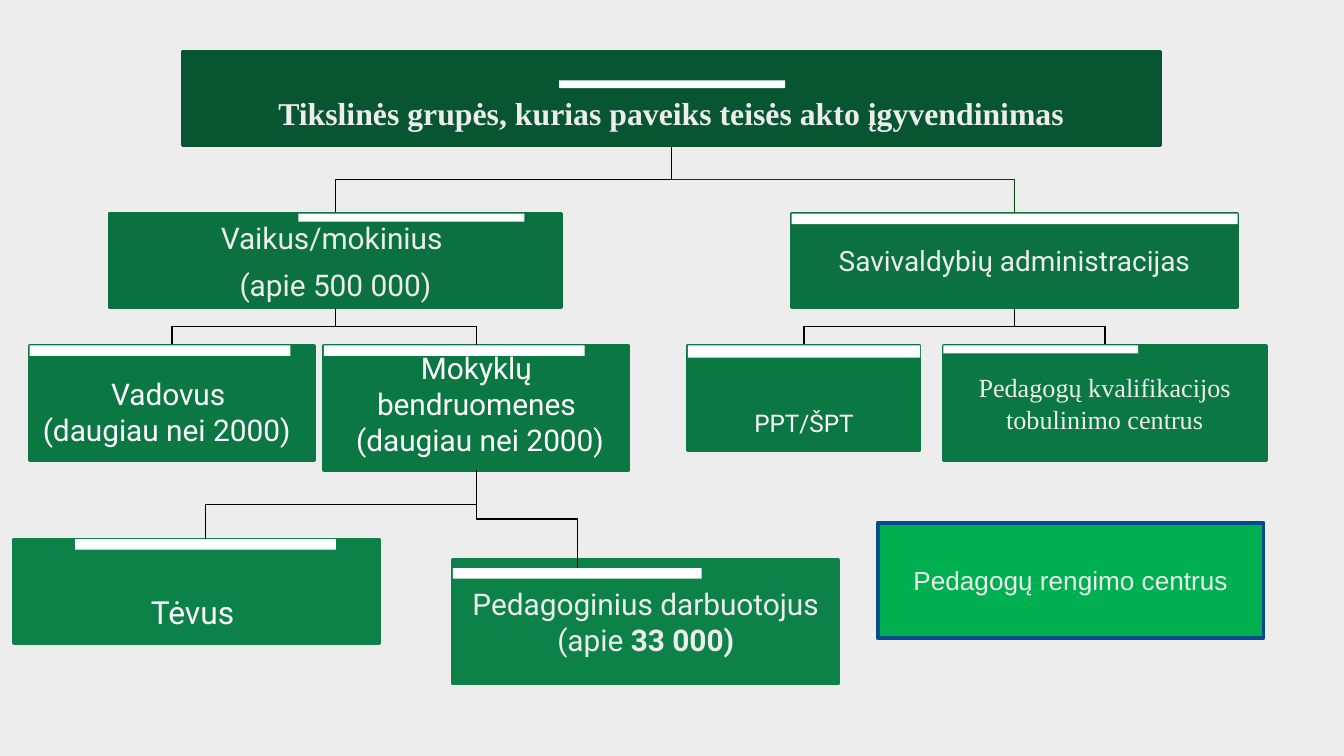
from dataclasses import dataclass

from lxml.etree import SubElement
from pptx import Presentation
from pptx.dml.color import RGBColor
from pptx.enum.shapes import MSO_CONNECTOR, MSO_SHAPE
from pptx.enum.text import MSO_ANCHOR, PP_ALIGN
from pptx.oxml.ns import qn
from pptx.util import Cm, Pt


@dataclass(frozen=True)
class Theme:
    background: str = "EDEDED"
    light: str = "EDEDED"
    white: str = "FFFFFF"
    black: str = "000000"
    dark_line: str = "004416"
    blue_line: str = "024B8E"
    bright: str = "00B050"
    levels: tuple = ("085631", "0B7140", "0B7743", "0C8148")
    sans: str = "Roboto"
    serif: str = "Times New Roman"
    plain: str = "Arial"
    large: int = 17
    medium: int = 16
    normal: int = 15
    small: int = 14
    tiny: int = 13


THEME = Theme()
CENTER, LEFT = PP_ALIGN.CENTER, PP_ALIGN.LEFT
MIDDLE, BOTTOM = MSO_ANCHOR.MIDDLE, MSO_ANCHOR.BOTTOM


@dataclass(frozen=True)
class Frame:
    """Place of a rectangle in centimetres."""
    left: float
    top: float
    width: float
    height: float

    @property
    def middle(self):
        return self.left + self.width / 2

    @property
    def bottom(self):
        return self.top + self.height


def write(para, text, font=THEME.sans, size=THEME.medium, color=THEME.light,
          bold=False, align=CENTER, before=0, spacing=None):
    para.alignment = align
    para.space_before = Pt(before)
    if spacing:
        para.line_spacing = spacing
    span = para.add_run()
    span.text = text
    span.font.name = font
    span.font.size = Pt(size)
    span.font.bold = bold
    span.font.color.rgb = RGBColor.from_string(color)


class Chart:
    def __init__(self, slide, theme):
        self.slide = slide
        self.theme = theme
        fill = slide.background.fill
        fill.solid()
        fill.fore_color.rgb = RGBColor.from_string(theme.background)

    def rectangle(self, shapes, frame, color, line=None, weight=1.5):
        box = shapes.add_shape(MSO_SHAPE.RECTANGLE, Cm(frame.left), Cm(frame.top),
                               Cm(frame.width), Cm(frame.height))
        box.shadow.inherit = False
        box.fill.solid()
        box.fill.fore_color.rgb = RGBColor.from_string(color)
        if line:
            box.line.color.rgb = RGBColor.from_string(line)
            box.line.width = Pt(weight)
        else:
            box.line.fill.background()
        return box

    def label(self, box, spans, anchor):
        frame = box.text_frame
        frame.word_wrap = True
        frame.vertical_anchor = anchor
        frame.margin_left = frame.margin_right = Cm(0.25)
        frame.margin_top = frame.margin_bottom = Cm(0.25)
        for index, (text, style) in enumerate(spans):
            style = dict(style)
            joined = style.pop("joined", False)
            if index and not joined:
                frame.add_paragraph()
            write(frame.paragraphs[-1], text, **style)

    def node(self, frame, bar, color, anchor, spans):
        group = self.slide.shapes.add_group_shape()
        box = self.rectangle(group.shapes, frame, color, color)
        self.label(box, spans, anchor)
        self.rectangle(group.shapes, bar, self.theme.white)

    def link(self, parent, child, color=THEME.black):
        """Elbow that leaves the parent's bottom and enters the child's top."""
        center_x = (parent.middle + child.middle) / 2
        center_y = (parent.bottom + child.top) / 2
        half_drop = (child.top - parent.bottom) / 2
        half_run = abs(child.middle - parent.middle) / 2
        rightward = child.middle > parent.middle
        # The elbow is laid out sideways, then turned to run downward
        reach = -half_drop if rightward else half_drop
        line = self.slide.shapes.add_connector(
            MSO_CONNECTOR.ELBOW, Cm(center_x - reach), Cm(center_y - half_run),
            Cm(center_x + reach), Cm(center_y + half_run))
        line.line.color.rgb = RGBColor.from_string(color)
        line.line.width = Pt(0.75)
        properties = line._element.spPr
        turn = 270 if rightward else 90
        properties.find(qn("a:xfrm")).set("rot", str(turn * 60000))
        SubElement(properties, qn("a:effectLst"))


# Boxes and their white bars
BOXES = {
    "title": Frame(3.45, 0.97, 18.49, 1.78),
    "pupils": Frame(2.06, 4.04, 8.56, 1.78),
    "councils": Frame(14.96, 4.04, 8.43, 1.78),
    "training": Frame(17.83, 6.53, 6.1, 2.18),
    "services": Frame(13, 6.53, 4.39, 1.98),
    "heads": Frame(0.56, 6.53, 5.38, 2.18),
    "schools": Frame(6.12, 6.53, 5.77, 2.36),
    "teachers": Frame(8.56, 10.57, 7.29, 2.36),
    "parents": Frame(0.25, 10.19, 6.93, 1.98),
    "preparation": Frame(16.59, 9.88, 7.29, 2.18),
}
BARS = {
    "title": Frame(10.57, 1.52, 4.27, 0.15),
    "pupils": Frame(5.64, 4.04, 4.27, 0.15),
    "councils": Frame(14.96, 4.04, 8.43, 0.2),
    "training": Frame(17.83, 6.53, 3.68, 0.15),
    "services": Frame(13, 6.53, 4.39, 0.23),
    "heads": Frame(0.56, 6.53, 4.93, 0.2),
    "schools": Frame(6.12, 6.53, 4.93, 0.2),
    "teachers": Frame(8.56, 10.74, 4.7, 0.2),
    "parents": Frame(1.42, 10.19, 4.93, 0.2),
}

# Name, level, anchor and text of each box with a bar
WHITE = dict(color=THEME.white)
NODES = [
    ("title", 0, BOTTOM, [("Tikslinės grupės, kurias paveiks teisės akto įgyvendinimas",
                           dict(font=THEME.serif, size=THEME.large, bold=True, spacing=1.18))]),
    ("pupils", 1, MIDDLE, [("Vaikus/mokinius ", dict(before=6)),
                           ("(apie 500 000)", dict(before=6))]),
    ("councils", 1, MIDDLE, [("Savivaldybių administracijas",
                              dict(size=THEME.normal, before=6))]),
    ("training", 2, MIDDLE, [("Pedagogų kvalifikacijos tobulinimo centrus",
                              dict(font=THEME.serif, size=THEME.small))]),
    ("services", 2, BOTTOM, [("PPT/ŠPT", dict(WHITE, size=THEME.tiny))]),
    ("heads", 2, BOTTOM, [("Vadovus ", WHITE),
                          ("(daugiau nei 2000)", dict(WHITE, align=LEFT))]),
    ("schools", 2, BOTTOM, [("Mokyklų bendruomenes", WHITE),
                            (" (daugiau nei 2000)", WHITE)]),
    ("teachers", 3, MIDDLE, [("Pedagoginius darbuotojus (apie ", {}),
                             ("33 000)", dict(bold=True, joined=True))]),
    ("parents", 3, BOTTOM, [("Tėvus ", dict(WHITE, size=THEME.large))]),
]


def main():
    deck = Presentation()
    deck.slide_width, deck.slide_height = Cm(25.4), Cm(14.29)
    page = deck.slides.add_slide(deck.slide_layouts[6])
    chart = Chart(page, THEME)

    # Links behind the boxes
    chart.link(BOXES["title"], BOXES["councils"], THEME.dark_line)
    for parent, child in [("title", "pupils"), ("pupils", "heads"),
                          ("councils", "training"), ("councils", "services")]:
        chart.link(BOXES[parent], BOXES[child])

    # Boxes of the hierarchy
    for name, level, anchor, spans in NODES:
        chart.node(BOXES[name], BARS[name], THEME.levels[level], anchor, spans)

    # Links in front, the lower two ending at the bars
    for name in ("parents", "teachers"):
        chart.link(BOXES["schools"], BARS[name])

    # Separate box outside the hierarchy
    box = chart.rectangle(page.shapes, BOXES["preparation"], THEME.bright,
                          THEME.blue_line, weight=2)
    chart.label(box, [("Pedagogų rengimo centrus",
                       dict(font=THEME.plain, size=THEME.small))], MIDDLE)
    chart.link(BOXES["pupils"], BOXES["schools"])

    deck.save("out.pptx")


if __name__ == "__main__":
    main()
